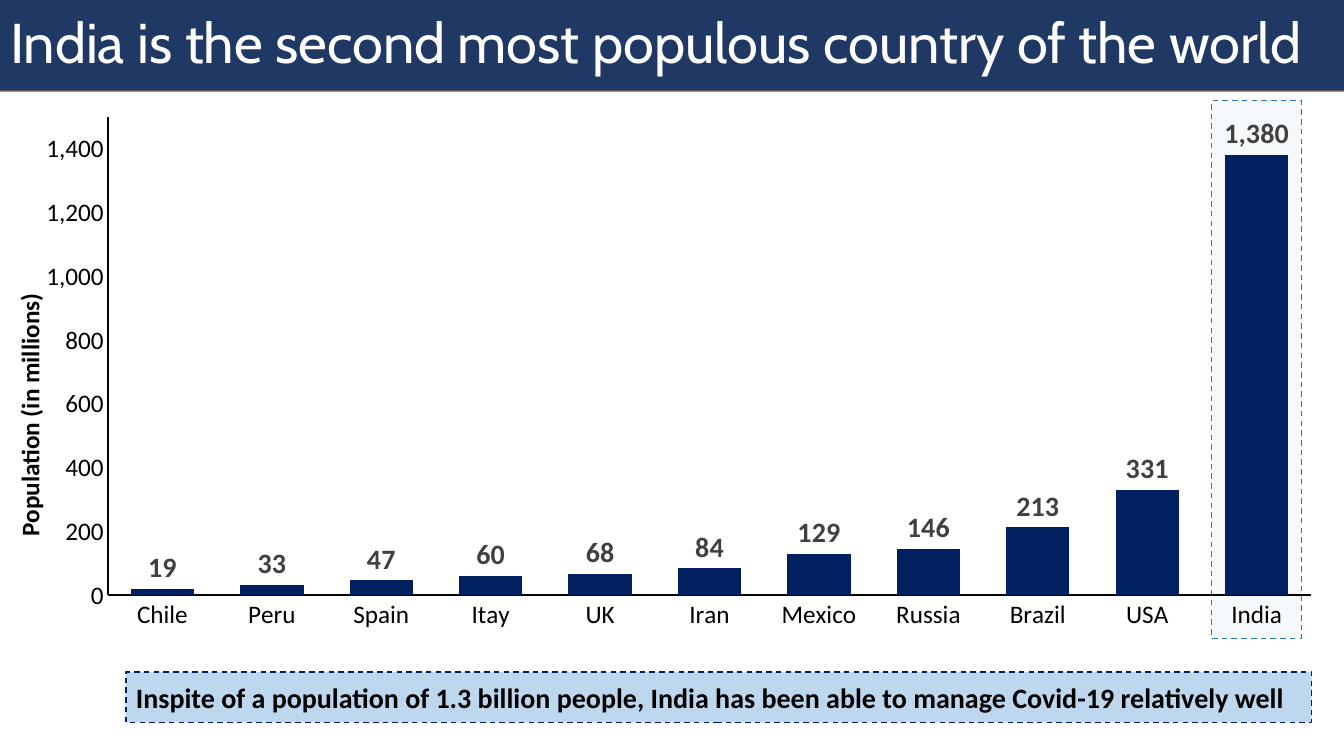
from lxml import etree
from pptx import Presentation
from pptx.chart.data import CategoryChartData
from pptx.dml.color import RGBColor
from pptx.enum.chart import XL_CHART_TYPE, XL_LABEL_POSITION, XL_TICK_MARK
from pptx.enum.dml import MSO_LINE
from pptx.enum.shapes import MSO_CONNECTOR, MSO_SHAPE
from pptx.enum.text import MSO_ANCHOR, MSO_AUTO_SIZE, PP_ALIGN
from pptx.oxml import parse_xml
from pptx.oxml.ns import nsdecls, qn
from pptx.util import Pt

COLUMNS = XL_CHART_TYPE.COLUMN_CLUSTERED
ABOVE_BAR = XL_LABEL_POSITION.OUTSIDE_END
NO_TICK = XL_TICK_MARK.NONE
DASH = MSO_LINE.DASH
STRAIGHT = MSO_CONNECTOR.STRAIGHT
RECTANGLE = MSO_SHAPE.RECTANGLE
MIDDLE = MSO_ANCHOR.MIDDLE
NO_FIT = MSO_AUTO_SIZE.NONE
LEFT = PP_ALIGN.LEFT

BLACK = RGBColor(0x00, 0x00, 0x00)
WHITE = RGBColor(0xFF, 0xFF, 0xFF)
GREY = RGBColor(0x40, 0x40, 0x40)
ORANGE = RGBColor(0xED, 0x7D, 0x31)
TITLE_BLUE = RGBColor(0x20, 0x38, 0x64)
NAVY = RGBColor(0x00, 0x20, 0x60)
MID_BLUE = RGBColor(0x2E, 0x75, 0xB6)
LIGHT_BLUE = RGBColor(0xBD, 0xD7, 0xEE)
PALE_BLUE = RGBColor(0xDE, 0xEB, 0xF7)

PAGE_WIDTH, PAGE_HEIGHT = 960, 540
TITLE_HEIGHT = 64.8
POPULATION = {
    "Chile": 19, "Peru": 33, "Spain": 47, "Itay": 60, "UK": 68, "Iran": 84,
    "Mexico": 129, "Russia": 146, "Brazil": 213, "USA": 331, "India": 1380,
}
PLOT_AREA = {"x": 0.05, "y": 0.03, "w": 0.95, "h": 0.89}


def set_values(target, values):
    """Set each attribute of the target from a dict."""
    for name, value in values.items():
        setattr(target, name, value)


def style_font(font, size, color, name="Calibri", bold=False):
    """Give a font its face, size, weight and colour."""
    set_values(font, {"name": name, "size": Pt(size), "bold": bold})
    font.color.rgb = color


def style_line(line, color, width, dash=None):
    """Give an outline its colour, width and dash."""
    line.color.rgb = color
    set_values(line, {"width": Pt(width), "dash_style": dash})


def place(shape, left, top, width, height):
    """Move and size a shape in points."""
    set_values(shape, {"left": Pt(left), "top": Pt(top),
                       "width": Pt(width), "height": Pt(height)})


def write_text(shape, text, **font):
    """Write one left-aligned, vertically centred paragraph."""
    frame = shape.text_frame
    set_values(frame, {"word_wrap": True, "auto_size": NO_FIT,
                       "vertical_anchor": MIDDLE})
    para = frame.paragraphs[0]
    para.alignment = LEFT
    span = para.add_run()
    span.text = text
    style_font(span.font, **font)
    return para


def add_dashed_box(page, frame, fill, line, opacity=100):
    """Add a dashed rectangle with an optional see-through fill."""
    box = page.shapes.add_shape(RECTANGLE, *map(Pt, frame))
    box.shadow.inherit = False
    box.fill.solid()
    box.fill.fore_color.rgb = fill
    style_line(box.line, line, 1, DASH)
    if opacity < 100:
        color = box.element.spPr.find(qn("a:solidFill"))[0]
        etree.SubElement(color, qn("a:alpha"), val=str(opacity * 1000))
    return box


def add_title(page, text):
    """Fill the title band and put its orange rule behind it."""
    title = page.shapes.title
    place(title, 0, 0, PAGE_WIDTH, TITLE_HEIGHT)
    title.fill.solid()
    title.fill.fore_color.rgb = TITLE_BLUE
    para = write_text(title, text, size=40, color=WHITE, name="Cabin")
    para.line_spacing = 0.9
    rule = page.shapes.add_connector(
        STRAIGHT, 0, Pt(TITLE_HEIGHT), Pt(PAGE_WIDTH), Pt(TITLE_HEIGHT))
    style_line(rule.line, ORANGE, 2.25)
    etree.SubElement(rule.element.spPr, qn("a:effectLst"))
    title.element.addprevious(rule.element)


def style_axis(axis):
    """Give an axis a black line and plain labels without ticks."""
    set_values(axis, {"has_major_gridlines": False, "has_title": False,
                      "major_tick_mark": NO_TICK, "minor_tick_mark": NO_TICK})
    style_font(axis.tick_labels.font, 18, BLACK)
    style_line(axis.format.line, BLACK, 1.5)


def fix_plot_area(chart):
    """Pin the inner plot area to fixed shares of the chart."""
    edges = "".join(f'<c:{key} val="{share}"/>' for key, share in PLOT_AREA.items())
    layout = parse_xml(
        f'<c:layout {nsdecls("c")}><c:manualLayout><c:layoutTarget val="inner"/>'
        f'<c:xMode val="edge"/><c:yMode val="edge"/>{edges}</c:manualLayout></c:layout>')
    area = chart.element.find(".//" + qn("c:plotArea"))
    for old in area.findall(qn("c:layout")):
        area.remove(old)
    area.insert(0, layout)


def add_population_chart(page, frame):
    """Add the column chart of population by country."""
    data = CategoryChartData()
    data.categories = list(POPULATION)
    data.add_series("Series 1", list(POPULATION.values()))
    chart = page.shapes.add_chart(COLUMNS, *map(Pt, frame), data).chart
    set_values(chart, {"has_legend": False, "has_title": False})
    style_font(chart.font, 10, BLACK)
    plot = chart.plots[0]
    set_values(plot, {"gap_width": 73, "overlap": -27,
                      "vary_by_categories": False, "has_data_labels": True})
    style_axis(chart.category_axis)
    style_axis(chart.value_axis)
    set_values(chart.value_axis, {"minimum_scale": 0, "maximum_scale": 1500,
                                  "major_unit": 200})
    set_values(chart.value_axis.tick_labels, {"number_format": "#,##0",
                                              "number_format_is_linked": False})
    labels = plot.data_labels
    set_values(labels, {"show_value": True, "position": ABOVE_BAR,
                        "number_format": "#,##0", "number_format_is_linked": False})
    style_font(labels.font, 20, GREY, bold=True)
    bars = plot.series[0].format.fill
    bars.solid()
    bars.fore_color.rgb = NAVY
    fix_plot_area(chart)


def add_axis_caption(page, frame, text):
    """Add the caption that reads upwards beside the value axis."""
    box = page.shapes.add_textbox(*map(Pt, frame))
    box.rotation = 270
    write_text(box, text, size=18, color=BLACK, bold=True)


def main():
    """Build the slide and save the deck."""
    deck = Presentation()
    set_values(deck, {"slide_width": Pt(PAGE_WIDTH), "slide_height": Pt(PAGE_HEIGHT)})
    page = deck.slides.add_slide(deck.slide_layouts[5])
    add_title(page, "India is the second most populous country of the world")
    add_dashed_box(page, (865.5, 72, 64, 384), PALE_BLUE, MID_BLUE, opacity=28)
    add_population_chart(page, (31.7, 72, 905.8, 384))
    message = add_dashed_box(page, (90, 480, 847, 36), LIGHT_BLUE, NAVY)
    write_text(message, "Inspite of a population of 1.3 billion people, India has been "
               "able to manage Covid-19 relatively well", size=20, color=BLACK, bold=True)
    add_axis_caption(page, (-84.2, 270.7, 210.2, 29), "Population (in millions)")
    deck.save("out.pptx")


if __name__ == "__main__":
    main()
